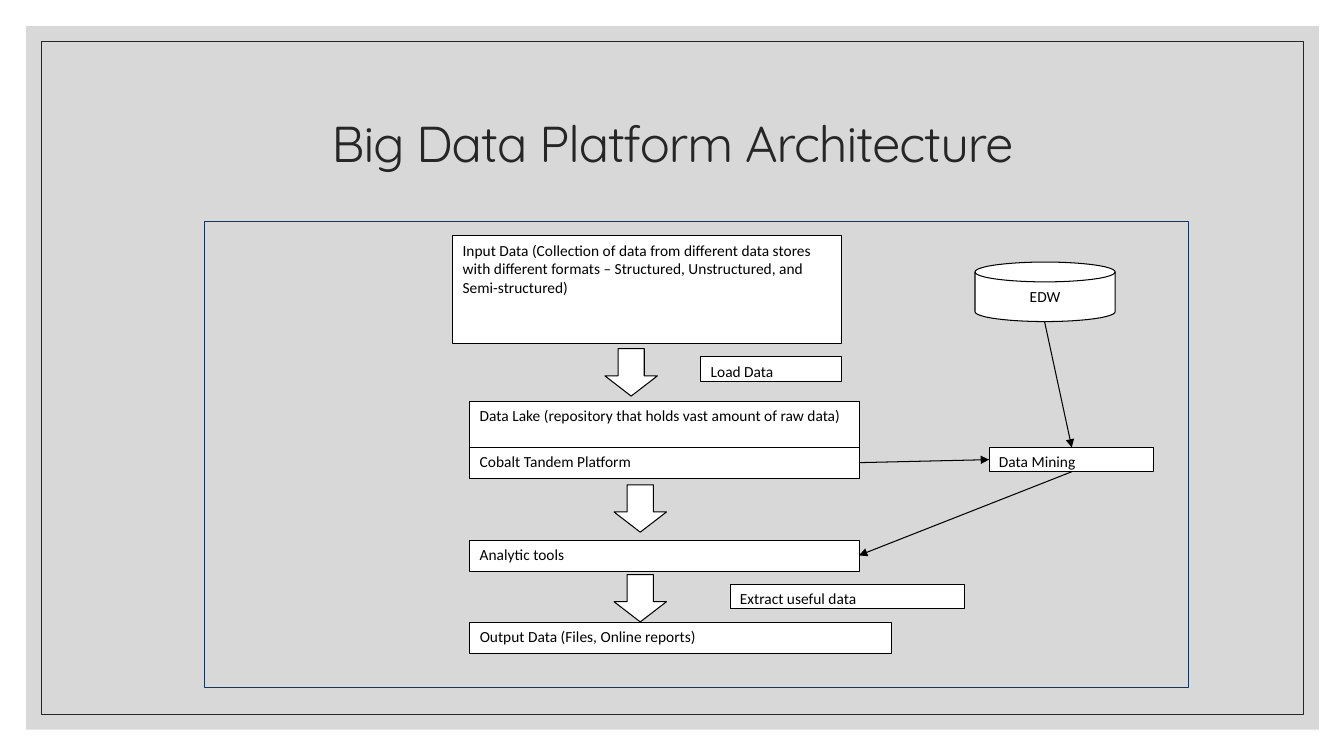
from lxml import etree
from pptx import Presentation
from pptx.dml.color import RGBColor
from pptx.enum.shapes import MSO_CONNECTOR, MSO_SHAPE
from pptx.enum.text import MSO_ANCHOR, MSO_AUTO_SIZE, PP_ALIGN
from pptx.oxml.ns import qn
from pptx.util import Pt

RECT, DOWN = MSO_SHAPE.RECTANGLE, MSO_SHAPE.DOWN_ARROW
DISK = MSO_SHAPE.FLOWCHART_MAGNETIC_DISK
STRAIGHT = MSO_CONNECTOR.STRAIGHT
LEFT, CENTER = PP_ALIGN.LEFT, PP_ALIGN.CENTER
TOP, MIDDLE = MSO_ANCHOR.TOP, MSO_ANCHOR.MIDDLE
PX = 9144  # 100 px to the inch
rgb = RGBColor.from_string

prs = Presentation()
prs.slide_width, prs.slide_height = 1333 * PX, 750 * PX
slide = prs.slides.add_slide(prs.slide_layouts[5])


def add_shape(kind, box, fill=None, line=None, width=0.5):
    s = slide.shapes.add_shape(kind, *[v * PX for v in box])
    s.shadow.inherit = False
    if fill:
        s.fill.solid()
        s.fill.fore_color.rgb = rgb(fill)
    else:
        s.fill.background()
    if line:
        s.line.color.rgb = rgb(line)
        s.line.width = Pt(width)
    else:
        s.line.fill.background()
    return s


def set_text(s, text, font, size, color, align, anchor):
    tf = s.text_frame
    tf.word_wrap = True
    tf.auto_size = MSO_AUTO_SIZE.NONE
    tf.vertical_anchor = anchor
    p = tf.paragraphs[0]
    p.alignment = align
    r = p.add_run()
    r.text = text
    for name, value in {"name": font, "size": Pt(size), "bold": False}.items():
        setattr(r.font, name, value)
    r.font.color.rgb = rgb(color)
    return p, r


# Background panel and frames
panel = add_shape(RECT, (26, 26, 1282, 698), fill="BFBFBF")
color = panel.fill._xPr.find(".//" + qn("a:srgbClr"))
etree.SubElement(color, qn("a:alpha"), val="60000")
add_shape(RECT, (41, 41, 1252, 668), line="262626")
add_shape(RECT, (203, 220, 976, 462), line="17365D", width=0.75)

# Title, raised above the panel
title = slide.shapes.title
slide.shapes._spTree.append(title._element)
for name, value in {"left": 117, "top": 70, "width": 1100, "height": 150}.items():
    setattr(title, name, value * PX)
p, r = set_text(title, "Big Data Platform Architecture", "Quicksand", 36,
                "262626", CENTER, MIDDLE)
p.line_spacing = 0.9
r.font._element.set("spc", "-70")

# Labelled boxes and the data store
boxes = [
    (RECT, (695, 354, 140, 24), "Load Data"),
    (RECT, (449, 234, 386, 107),
     "Input Data (Collection of data from different data stores with different "
     "formats – Structured, Unstructured, and Semi-structured)"),
    (RECT, (466, 398, 386, 46),
     "Data Lake (repository that holds vast amount of raw data)"),
    (RECT, (466, 444, 386, 31), "Cobalt Tandem Platform"),
    (DISK, (967, 260, 139, 59), "EDW"),
    (RECT, (981, 444, 163, 24), "Data Mining"),
    (RECT, (466, 536, 386, 31), "Analytic tools"),
    (RECT, (466, 617, 418, 31), "Output Data (Files, Online reports)"),
    (RECT, (724, 580, 233, 24), "Extract useful data"),
]
for kind, box, text in boxes:
    s = add_shape(kind, box, "FFFFFF", "000000", 0.75 if kind == DISK else 0.5)
    set_text(s, text, "Calibri", 11, "000000",
             CENTER if kind == DISK else LEFT, TOP)

# Block arrows between the stages
for x, y in [(600, 346), (609, 481), (609, 570)]:
    s = add_shape(DOWN, (x, y, 52, 47), "FFFFFF", "000000", 0.75)
    s.adjustments[1] = 0.426

# Thin arrows to and from data mining
for ends in [(1036, 319, 1063, 444), (852, 459, 981, 456), (1063, 468, 852, 551)]:
    c = slide.shapes.add_connector(STRAIGHT, *[v * PX for v in ends])
    c.line.color.rgb = rgb("000000")
    c.line.width = Pt(0.75)
    etree.SubElement(c.line._get_or_add_ln(), qn("a:tailEnd"), type="triangle")
    etree.SubElement(c._element.spPr, qn("a:effectLst"))

prs.save("out.pptx")
